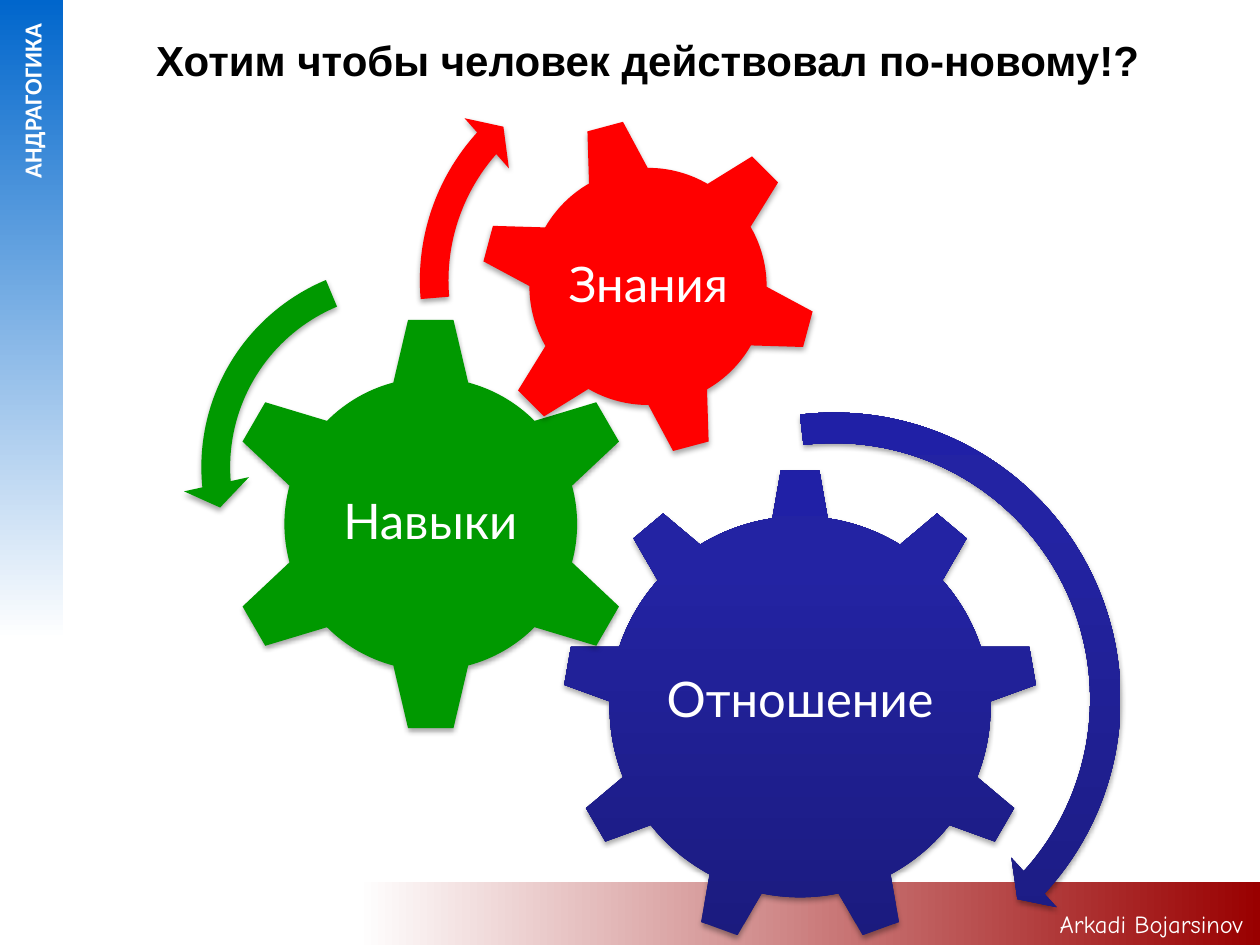
from copy import deepcopy
from lxml import etree
from pptx import Presentation
from pptx.dml.color import RGBColor
from pptx.enum.shapes import MSO_SHAPE
from pptx.enum.text import MSO_ANCHOR, MSO_AUTO_SIZE, PP_ALIGN
from pptx.oxml.ns import qn
from pptx.util import Cm, Pt

RECT = MSO_SHAPE.RECTANGLE
GEAR6, GEAR9 = MSO_SHAPE.GEAR_6, MSO_SHAPE.GEAR_9
ARC, LEFT_ARC = MSO_SHAPE.CIRCULAR_ARROW, MSO_SHAPE.LEFT_CIRCULAR_ARROW
TOP, MIDDLE = MSO_ANCHOR.TOP, MSO_ANCHOR.MIDDLE
LEFT, CENTER, RIGHT = PP_ALIGN.LEFT, PP_ALIGN.CENTER, PP_ALIGN.RIGHT
GROW, FIXED = MSO_AUTO_SIZE.SHAPE_TO_FIT_TEXT, MSO_AUTO_SIZE.NONE

COLORS = {
    "white": "FFFFFF", "black": "000000", "sky": "0066CC", "wine": "990000",
    "green": "009900", "red": "FF0000",
    "navy": "1B1B7E", "blue": "2323A3", "bright": "2020A6",
}
SIDE = (270, [(0, "sky"), (1, "white")])
FOOT = (0, [(0, "white"), (1, "wine")])
DEEP = (90, [(0, "navy"), (0.8, "blue"), (1, "bright")])

deck = Presentation()
deck.slide_width, deck.slide_height = Cm(25.4), Cm(19.05)
slide = deck.slides.add_slide(deck.slide_layouts[6])


def add_form(kind, box, paint, shade=True, turn=0, adjust=()):
    form = slide.shapes.add_shape(kind, *map(Cm, box))
    form.rotation = turn
    for i, value in enumerate(adjust):
        form.adjustments[i] = value
    fill = form.fill
    if isinstance(paint, str):
        fill.solid()
        fill.fore_color.rgb = RGBColor.from_string(COLORS[paint])
    else:
        angle, stops = paint
        fill.gradient()
        fill.gradient_angle = angle
        marks = form._element.spPr.find(".//" + qn("a:gsLst"))
        while len(marks) < len(stops):
            marks.append(deepcopy(marks[-1]))
        for mark, (place, color) in zip(fill.gradient_stops, stops):
            mark.position = place
            mark.color.rgb = RGBColor.from_string(COLORS[color])
    form.line.fill.background()
    form.shadow.inherit = False
    if shade:
        effects = form._element.spPr.find(qn("a:effectLst"))
        glow = etree.SubElement(effects, qn("a:outerShdw"), blurRad="40000",
                                dist="23000", dir="5400000", rotWithShape="0")
        tone = etree.SubElement(glow, qn("a:srgbClr"), val=COLORS["black"])
        etree.SubElement(tone, qn("a:alpha"), val="35000")


def add_label(text, box, font, frame, align=LEFT, color="white", turn=0, space=1):
    label = slide.shapes.add_textbox(*map(Cm, box))
    label.rotation = turn
    for name, value in frame.items():
        setattr(label.text_frame, name, value)
    line = label.text_frame.paragraphs[0]
    line.alignment = align
    line.line_spacing = space
    run = line.add_run()
    run.text = text
    for name, value in font.items():
        setattr(run.font, name, value)
    run.font.color.rgb = RGBColor.from_string(COLORS[color])


OPEN = {"word_wrap": False, "auto_size": GROW, "vertical_anchor": TOP}
WRAP = {"word_wrap": True, "auto_size": GROW, "vertical_anchor": TOP}
INNER = {"word_wrap": True, "auto_size": FIXED, "vertical_anchor": MIDDLE}
for edge in ("left", "right", "top", "bottom"):
    INNER["margin_" + edge] = Cm(0.1)

add_form(RECT, (0, 0, 1.27, 12.9), SIDE, shade=False)
add_form(RECT, (7.19, 17.78, 18.21, 1.27), FOOT, shade=False)
add_label("АНДРАГОГИКА", (-1.9, 2.34, 5.08, 0.84),
          {"name": "Calibri", "size": Pt(14), "bold": True}, WRAP, RIGHT, turn=270)
add_label("Arkadi Bojarsinov", (21.11, 18.21, 4.29, 0.84),
          {"name": "Comic Neue", "size": Pt(14)}, OPEN)

gears = [
    ("Отношение", GEAR9, (11.33, 9.45, 9.6), DEEP, 0, (13.26, 11.68, 5.74, 4.93)),
    ("Навыки", GEAR6, (4.47, 6.35, 8.43), "green", 0, (6.58, 8.48, 4.19, 4.17)),
    ("Знания", GEAR6, (9.65, 2.36, 6.83), "red", 345, (11.15, 3.86, 3.84, 3.84)),
]
for text, kind, (x, y, size), paint, turn, inner in gears:
    add_form(kind, (x, y, size, size), paint, turn=turn)
    add_label(text, inner, {"name": "Lato", "size": Pt(28)}, INNER, CENTER, space=0.9)

arcs = [
    (ARC, (10.67, 7.95, 12.29), DEEP, (0.05, 2.99, 25.51, 157.89, 0.055)),
    (LEFT_ARC, (3.68, 4.95, 8.94), "green", (0.065, 4.3, 104.89, 148.38, 0.075)),
    (ARC, (8.08, 0.84, 9.63), "red", (0.06, 3.94, 133.14, 105.08, 0.07)),
]
for kind, (x, y, size), paint, adjust in arcs:
    add_form(kind, (x, y, size, size), paint, adjust=adjust)

add_label("Хотим чтобы человек действовал по-новому!?", (2.9, 0.58, 20.4, 1.27),
          {"name": "Arial", "size": Pt(24), "bold": True}, OPEN, color="black")

deck.save("out.pptx")
